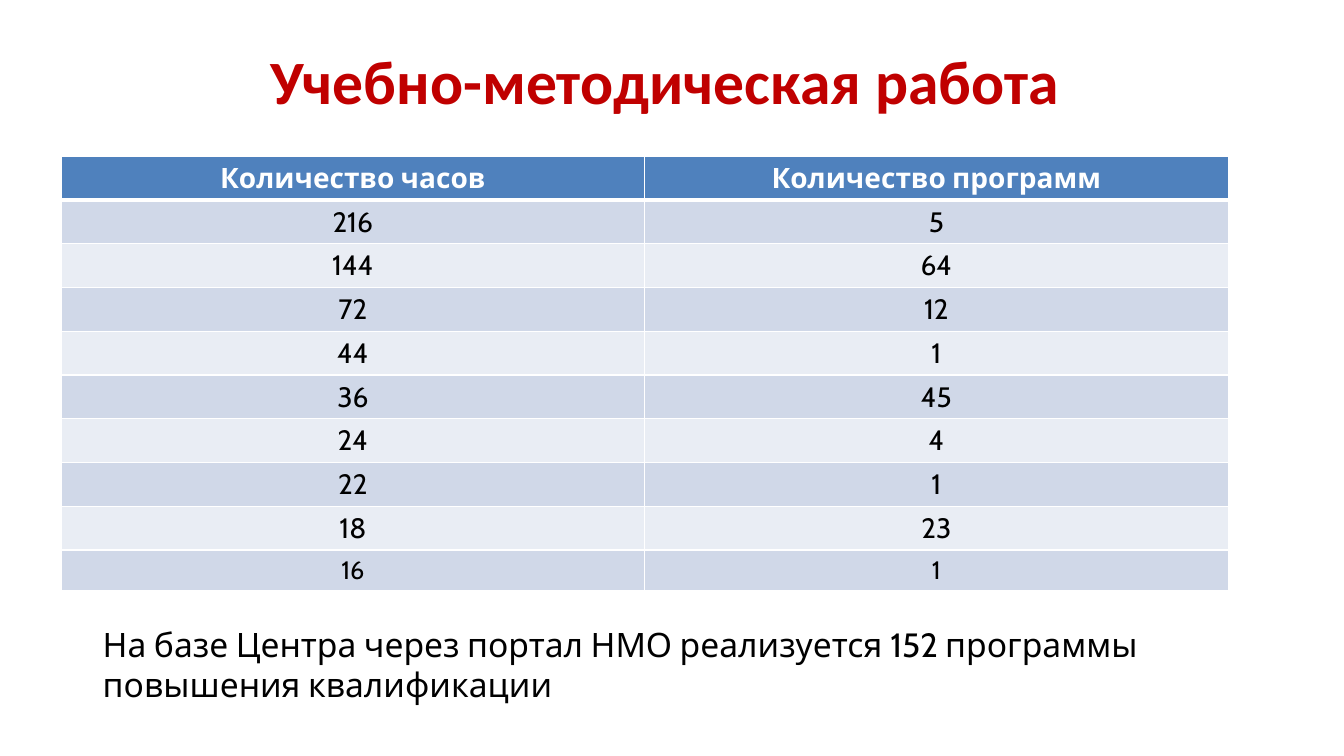
from lxml.etree import SubElement
from pptx import Presentation
from pptx.dml.color import RGBColor as Rgb
from pptx.enum.text import MSO_ANCHOR as Anchor, PP_ALIGN as Align
from pptx.oxml.ns import qn
from pptx.util import Cm, Pt

COLORS = {
    "title": "C00000", "text": "000000", "white": "FFFFFF",
    "header": "4F81BD", "odd": "D0D8E8", "even": "E9EDF4",
}
HEADINGS = ("Количество часов", "Количество программ")
PROGRAMS_BY_HOURS = [
    (216, 5), (144, 64), (72, 12), (44, 1), (36, 45),
    (24, 4), (22, 1), (18, 23), (16, 1),
]


class SlideBuilder:
    body_font = "Cabin"
    title_font = "Calibri"

    def __init__(self, slide):
        self.slide = slide

    def fill_text(self, frame, text, size, color, font=body_font, bold=False, align=Align.CENTER):
        frame.text = text
        paragraph = frame.paragraphs[0]
        paragraph.alignment = align
        style = paragraph.runs[0].font
        style.name, style.size, style.bold = font, Pt(size), bold
        style.color.rgb = Rgb.from_string(COLORS[color])

    def text(self, left, top, width, height, text, size, color, anchor=Anchor.TOP, **style):
        box = self.slide.shapes.add_textbox(Cm(left), Cm(top), Cm(width), Cm(height))
        frame = box.text_frame
        frame.word_wrap = True
        frame.vertical_anchor = anchor
        self.fill_text(frame, text, size, color, **style)

    def borders(self, cell, **widths):
        properties = cell._tc.get_or_add_tcPr()
        for side in "LRTB":
            line = SubElement(properties, qn(f"a:ln{side}"), w=str(Pt(widths.get(side, 1))))
            fill = SubElement(line, qn("a:solidFill"))
            SubElement(fill, qn("a:srgbClr"), val=COLORS["white"])

    def table(self, left, top, width, row_height, rows):
        table = self.slide.shapes.add_table(
            len(rows), len(rows[0]), Cm(left), Cm(top), Cm(width), Cm(row_height * len(rows))
        ).table
        last = len(rows) - 1
        for i, values in enumerate(rows):
            header = i == 0
            fill = "header" if header else ("even", "odd")[i % 2]
            # A thick rule separates the header from the first data row
            rule = {0: {"B": 3}, 1: {"T": 3}}.get(i, {})
            for j, value in enumerate(values):
                cell = table.cell(i, j)
                self.fill_text(cell.text_frame, str(value), 18 if i == last else 20,
                               "white" if header else "text", bold=header)
                self.borders(cell, **rule)
                cell.fill.solid()
                cell.fill.fore_color.rgb = Rgb.from_string(COLORS[fill])


def main():
    deck = Presentation()
    deck.slide_width, deck.slide_height = Cm(33.87), Cm(19.05)
    builder = SlideBuilder(deck.slides.add_slide(deck.slide_layouts[6]))

    # Title
    builder.text(1.52, 0.91, 30.48, 2.21, "Учебно-методическая работа", 44, "title",
                 anchor=Anchor.MIDDLE, font=builder.title_font, bold=True)

    # Programs by number of hours
    builder.table(1.54, 3.94, 29.41, 1.03, [HEADINGS, *PROGRAMS_BY_HOURS])

    # Summary
    builder.text(2.34, 15.6, 29.21, 2.31,
                 "На базе Центра через портал НМО реализуется 152 программы повышения квалификации",
                 24, "text", align=Align.LEFT)

    deck.save("out.pptx")


if __name__ == "__main__":
    main()
